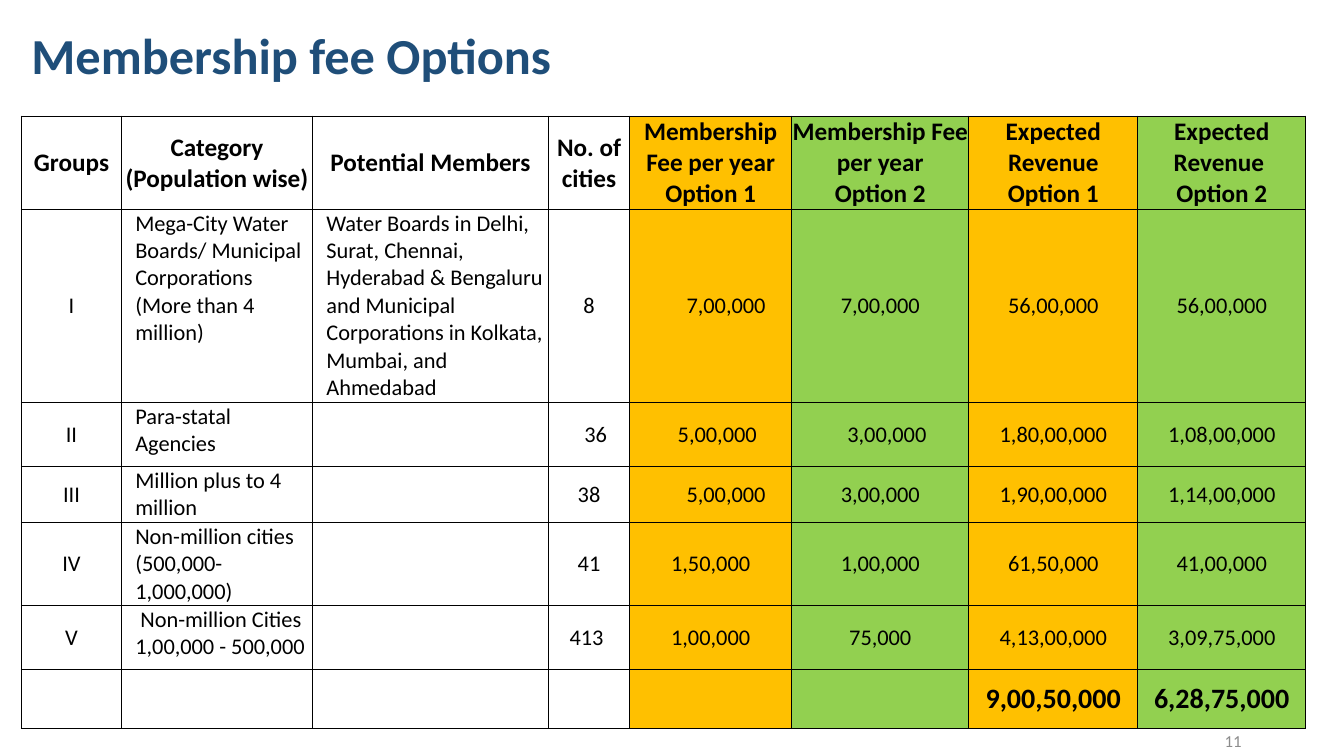
from lxml.etree import SubElement
from pptx import Presentation
from pptx.dml.color import RGBColor
from pptx.enum.text import MSO_ANCHOR as Anchor, PP_ALIGN as Align
from pptx.oxml.ns import qn
from pptx.util import Pt

FONT = "Calibri"
BLACK, NAVY, GREY = "000000", "1F4E79", "8C8C8C"
AMBER, GREEN = "FFC000", "92D050"
COLUMN_WIDTHS = [71.4, 136.5, 168.5, 58, 115.8, 126.5, 120.7, 120]
ROW_HEIGHTS = [66.4, 138, 45.8, 40, 59.4, 45.6, 42]
COLUMN_FILLS = [None] * 4 + [AMBER, GREEN] * 2
DESCRIPTION_COLUMNS = (1, 2)
INDENT, WIDE_INDENT = 9.4, 22
NUMBER_INDENTS = {(1, 4): WIDE_INDENT, (3, 4): WIDE_INDENT,
                  (2, 3): INDENT, (2, 4): INDENT, (2, 5): INDENT}
ROWS = [
    ["Groups", "Category (Population wise)", "Potential Members", "No. of cities",
     "Membership Fee per year\nOption 1", "Membership Fee per year\nOption 2",
     "Expected Revenue Option 1", "Expected Revenue \nOption 2"],
    ["I", "Mega-City Water Boards/ Municipal Corporations (More than 4 million)",
     "Water Boards in Delhi, Surat, Chennai, Hyderabad & Bengaluru and Municipal "
     "Corporations in Kolkata, Mumbai, and Ahmedabad",
     "8", "7,00,000", "7,00,000", "56,00,000", "56,00,000"],
    ["II", "Para-statal Agencies", "", "36",
     "5,00,000", "3,00,000", "1,80,00,000", "1,08,00,000"],
    ["III", "Million plus to 4 million", "", "38",
     "5,00,000", "3,00,000", "1,90,00,000", "1,14,00,000"],
    ["IV", "Non-million cities (500,000-1,000,000)", "", "41",
     "1,50,000", "1,00,000", "61,50,000", "41,00,000"],
    ["V", " Non-million Cities\n1,00,000 - 500,000", "", "413 ",
     "1,00,000", "75,000", "4,13,00,000", "3,09,75,000"],
    ["", "", "", "", "", "", "9,00,50,000", "6,28,75,000"],
]


def color(value):
    """Turn a hex string into a colour."""
    return RGBColor.from_string(value)


def add_run(paragraph, text, size, hex_color=BLACK, bold=False):
    """Add one formatted run to a paragraph."""
    run = paragraph.add_run()
    run.text = text
    run.font.name = FONT
    run.font.size = Pt(size)
    run.font.bold = bold
    run.font.color.rgb = color(hex_color)


def add_text(slide, box, text, size, hex_color, bold=False, align=Align.LEFT):
    """Add a one-line text box centred vertically."""
    frame = slide.shapes.add_textbox(*map(Pt, box)).text_frame
    frame.word_wrap = True
    frame.vertical_anchor = Anchor.MIDDLE
    frame.margin_top = frame.margin_bottom = Pt(0)
    paragraph = frame.paragraphs[0]
    paragraph.alignment = align
    paragraph.line_spacing = 0.9
    add_run(paragraph, text, size, hex_color, bold)


def add_borders(cell):
    """Draw a thin black line on the four sides of a cell."""
    properties = cell._tc.get_or_add_tcPr()
    for side in ("a:lnL", "a:lnR", "a:lnT", "a:lnB"):
        line = SubElement(properties, qn(side), w=str(Pt(1)))
        fill = SubElement(line, qn("a:solidFill"))
        SubElement(fill, qn("a:srgbClr"), val=BLACK)


def format_cell(cell, fill):
    """Set the borders, fill and margins of a cell."""
    add_borders(cell)
    if fill:
        cell.fill.solid()
        cell.fill.fore_color.rgb = color(fill)
    else:
        cell.fill.background()
    cell.margin_left = cell.margin_right = cell.margin_top = Pt(0.5)
    cell.margin_bottom = Pt(0)


def write_cell(cell, text, size, bold, align, indent):
    """Write the paragraphs of a cell."""
    for index, line in enumerate(text.split("\n")):
        frame = cell.text_frame
        paragraph = frame.add_paragraph() if index else frame.paragraphs[0]
        paragraph.alignment = align
        if indent:
            paragraph._p.get_or_add_pPr().set("marL", str(Pt(indent)))
        add_run(paragraph, line, size, bold=bold)


def add_fee_table(slide, left, top):
    """Add the table of membership fees and expected revenue."""
    table = slide.shapes.add_table(
        len(ROWS), len(COLUMN_WIDTHS), Pt(left), Pt(top),
        Pt(sum(COLUMN_WIDTHS)), Pt(sum(ROW_HEIGHTS))).table
    table.first_row = table.horz_banding = False
    for column, width in zip(table.columns, COLUMN_WIDTHS):
        column.width = Pt(width)
    for row, height in zip(table.rows, ROW_HEIGHTS):
        row.height = Pt(height)
    sizes = [18] + [16] * (len(ROWS) - 2) + [20]
    for row, texts in enumerate(ROWS):
        bold = row in (0, len(ROWS) - 1)
        for column, text in enumerate(texts):
            cell = table.cell(row, column)
            format_cell(cell, COLUMN_FILLS[column])
            if not text:
                continue
            described = column in DESCRIPTION_COLUMNS and row > 0
            cell.vertical_anchor = Anchor.TOP if described else Anchor.MIDDLE
            align = Align.LEFT if described else Align.CENTER
            indent = INDENT if described else NUMBER_INDENTS.get((row, column), 0)
            write_cell(cell, text, sizes[row], bold, align, indent)


def main():
    """Build the membership fee slide."""
    presentation = Presentation()
    presentation.slide_width, presentation.slide_height = Pt(960), Pt(540)
    slide = presentation.slides.add_slide(presentation.slide_layouts[6])
    add_text(slide, (15.4, 13, 828, 57), "Membership fee Options", 36, NAVY, bold=True)
    add_fee_table(slide, 15.4, 83)
    add_text(slide, (678, 522, 216, 16), "11", 12, GREY, align=Align.RIGHT)
    presentation.save("out.pptx")


if __name__ == "__main__":
    main()
